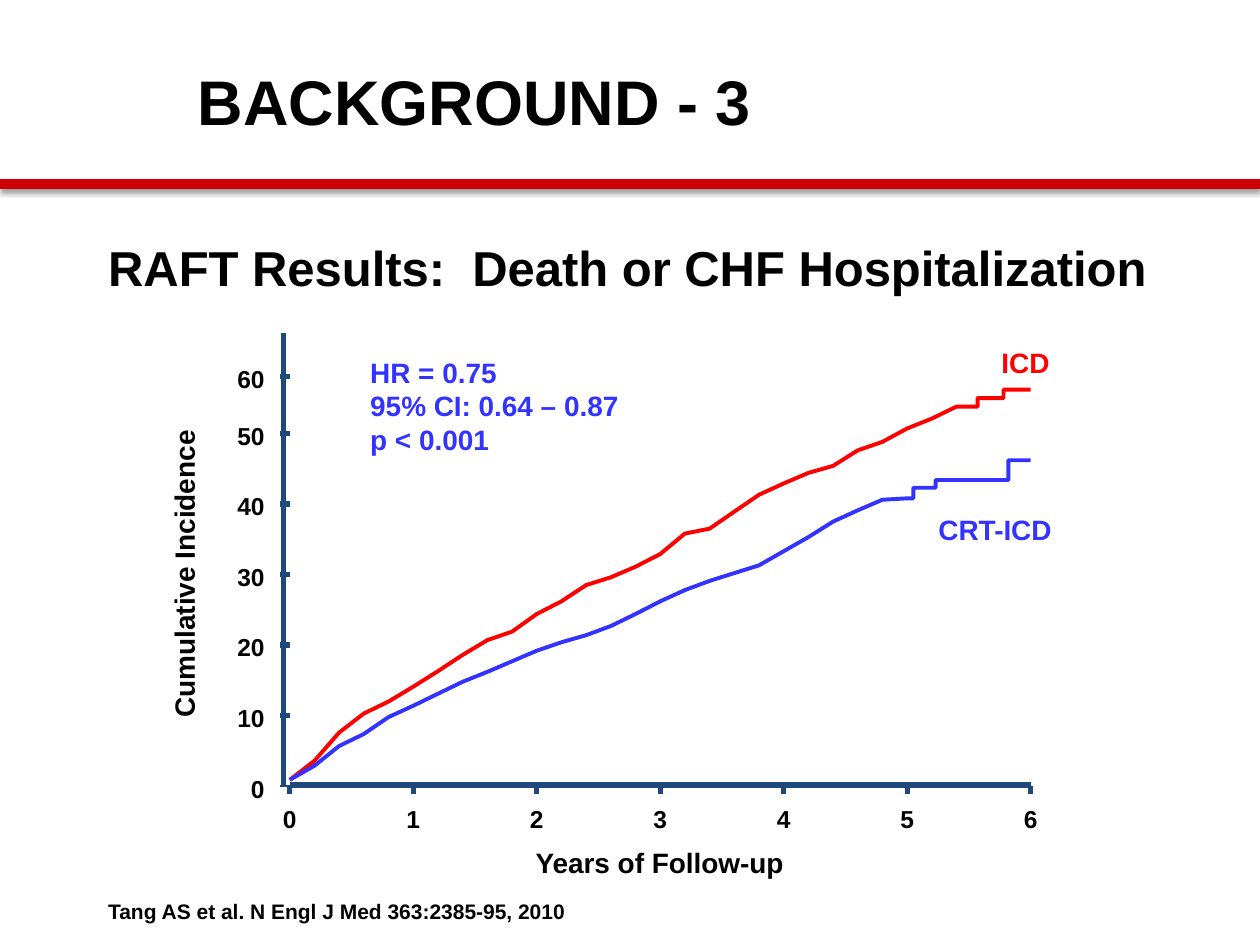
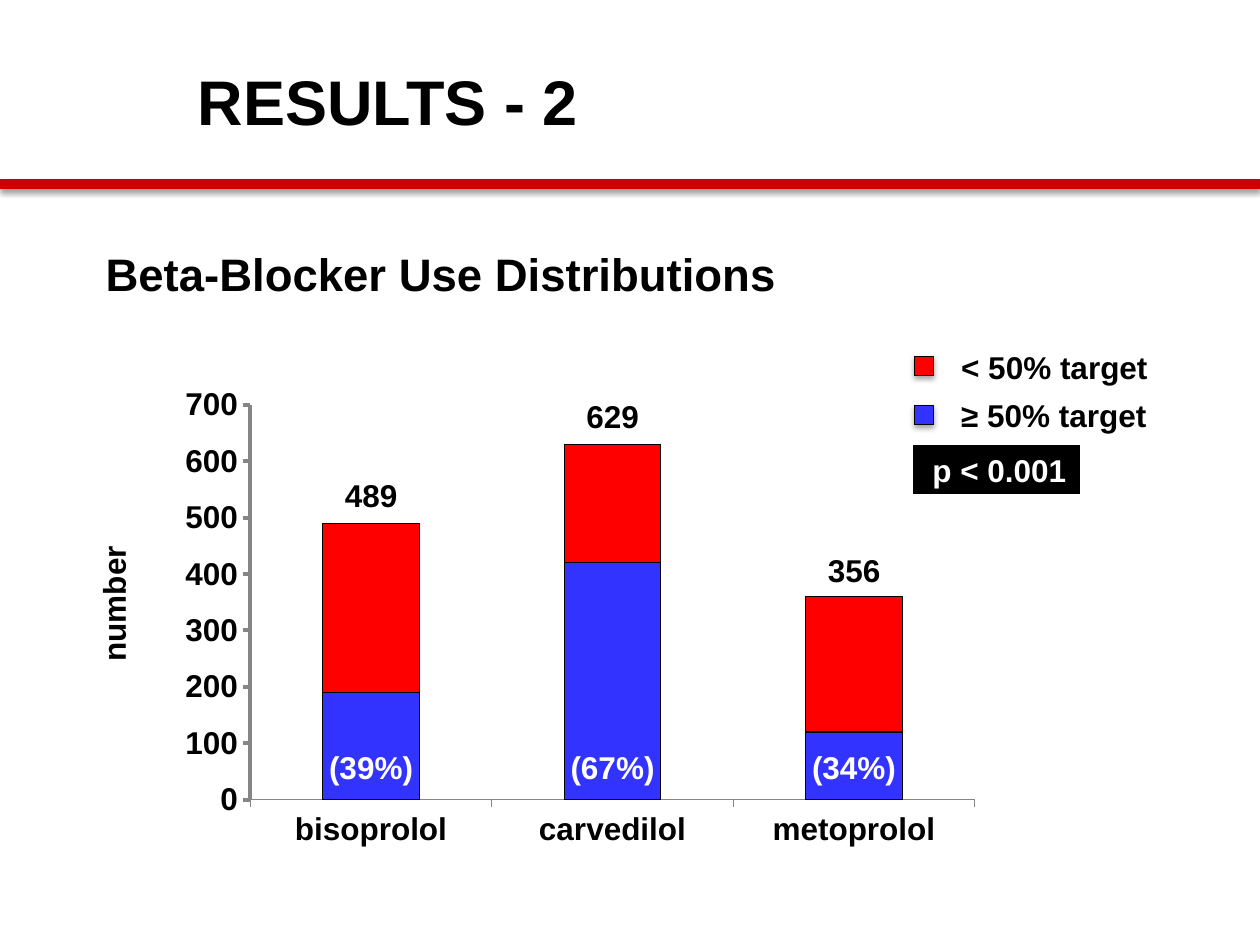
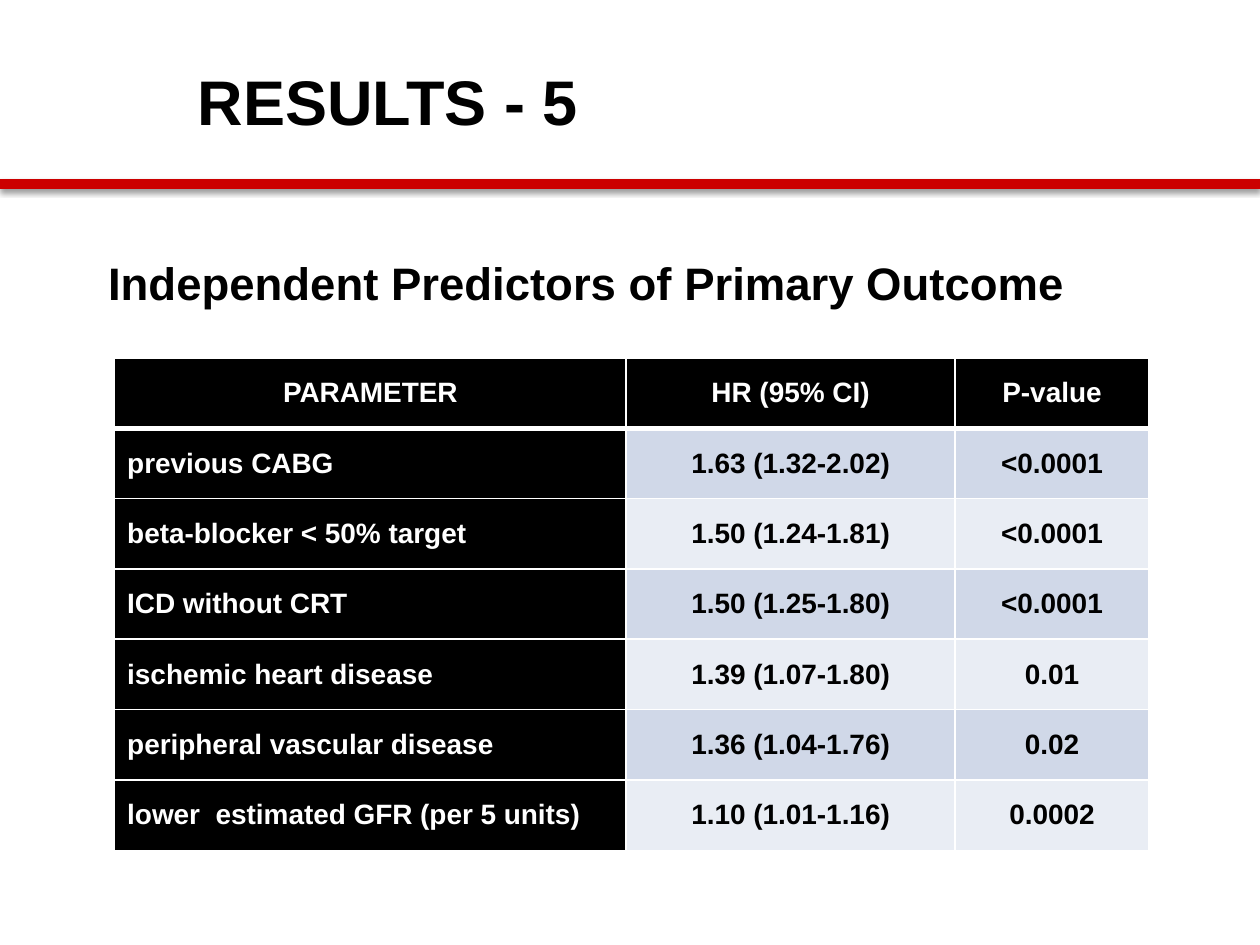
"""Builds three slides of a heart failure trial: survival curves, beta-blocker use and predictors."""
from lxml.etree import SubElement
from pptx import Presentation
from pptx.chart.data import CategoryChartData
from pptx.dml.color import RGBColor
from pptx.enum.chart import XL_CHART_TYPE as ChartType, XL_TICK_MARK as Tick
from pptx.enum.shapes import MSO_CONNECTOR as Connector, MSO_SHAPE as Shape
from pptx.enum.text import MSO_ANCHOR as Anchor, PP_ALIGN as Align
from pptx.oxml import parse_xml
from pptx.oxml.ns import nsdecls, qn
from pptx.util import Inches, Pt

FONT = "Arial"
COLORS = {
    "black": "000000", "white": "FFFFFF", "band": "CC0000", "red": "FF0000", "blue": "3333FF",
    "axis": "1F497D", "grey": "868686", "dark_row": "D0D8E8", "light_row": "E9EDF4",
}
WIDTH, HEIGHT = 10, 7.5
MARGIN = 0.76
BAND_TOP = 1.46
TITLE_BOX = (1.47, 0.17, 6.88, 1.25)

YEARS_PER_VALUE = 0.2
LAST_YEAR = 6
CURVES = [
    {
        "color": "red",
        "incidence": [0.9, 3.6, 7.6, 10.3, 12, 14.1, 16.3, 18.6, 20.7, 21.9, 24.4, 26.2, 28.5, 29.6,
                      31.1, 32.9, 35.8, 36.5, 38.9, 41.3, 42.9, 44.4, 45.4, 47.6, 48.8, 50.7, 52.1, 53.8],
        "late_steps": [(5.57, 55), (5.78, 56.2)],
    },
    {
        "color": "blue",
        "incidence": [0.9, 2.9, 5.7, 7.4, 9.8, 11.4, 13.1, 14.8, 16.2, 17.7, 19.2, 20.4, 21.4,
                      22.7, 24.4, 26.2, 27.8, 29.1, 30.2, 31.3, 33.3, 35.3, 37.5, 39.1, 40.6, 40.8],
        "late_steps": [(5.05, 42.3), (5.23, 43.4), (5.82, 46.2)],
    },
]
ORIGIN_X, ORIGIN_Y = 2.3, 6.24
YEAR_WIDTH, PERCENT_HEIGHT = 0.98, 0.056
AXIS_X, AXIS_TOP = 2.25, 2.64
TOP_TICK_Y = 2.99
TICK_LABEL = (0.4, 0.24)
CURVE_LABELS = [
    ("ICD", (7.85, 2.69, 1, 0.37), "red"),
    ("CRT-ICD", (7.35, 4.02, 1.56, 0.37), "blue"),
    ("HR = 0.75\n95% CI: 0.64 – 0.87\np < 0.001", (2.84, 2.77, 2.4, 0.91), "blue"),
]

DRUGS = ["bisoprolol", "carvedilol", "metoprolol"]
DOSES = [("Series 1", [190, 420, 120], "blue"), ("Series 2", [300, 210, 240], "red")]
TOTALS = [489, 629, 356]
SHARES = ["(39%)", "(67%)", "(34%)"]
LEGEND = [("< 50% target", "red"), ("≥ 50% target", "blue")]
LEGEND_X, LEGEND_Y, LEGEND_STEP, SWATCH = 7.26, 2.83, 0.39, 0.15
CHART_BOX = (1.22, 3.06, 6.67, 3.91)
PLOT_SHARES = (0.115, 0.039, 0.862, 0.802)
VALUE_MAX = 700

PREDICTORS = [
    ("PARAMETER", "HR (95% CI)", "P-value"),
    ("previous CABG", "1.63 (1.32-2.02)", "<0.0001"),
    ("beta-blocker < 50% target", "1.50 (1.24-1.81)", "<0.0001"),
    ("ICD without CRT", "1.50 (1.25-1.80)", "<0.0001"),
    ("ischemic heart disease", "1.39 (1.07-1.80)", "0.01"),
    ("peripheral vascular disease", "1.36 (1.04-1.76)", "0.02"),
    ("lower  estimated GFR (per 5 units)", "1.10 (1.01-1.16)", "0.0002"),
]
COLUMN_WIDTHS = [4.06, 2.61, 1.54]
TABLE_BOX = (0.91, 2.84, 8.2, 3.91)


def rgb(name):
    """Returns the named colour."""
    return RGBColor.from_string(COLORS[name])


def inches(*lengths):
    """Turns numbers into lengths in inches."""
    return [Inches(length) for length in lengths]


def set_font(font, size, color="black"):
    """Applies the bold face used throughout."""
    font.name, font.size, font.bold = FONT, Pt(size), True
    font.color.rgb = rgb(color)


def set_fill(target, color):
    """Fills a shape, cell or series with one colour."""
    target.fill.solid()
    target.fill.fore_color.rgb = rgb(color)


def set_line(line, color, width):
    """Sets the colour and width of an outline."""
    line.color.rgb, line.width = rgb(color), Pt(width)


def set_shadow(shape, alpha=0, distance=1.6):
    """Replaces the theme shadow by none, or by a soft one below the shape."""
    effects = SubElement(shape._element.spPr, qn("a:effectLst"))
    if alpha:
        shadow = SubElement(effects, qn("a:outerShdw"), blurRad=str(Pt(3.1)), dist=str(Pt(distance)),
                            dir="5400000", rotWithShape="0")
        color = SubElement(shadow, qn("a:srgbClr"), val=COLORS["black"])
        SubElement(color, qn("a:alpha"), val=str(alpha * 1000))


def write(frame, text, size, color="black", align=Align.LEFT, gap=0):
    """Writes one paragraph for each line of the text."""
    for index, words in enumerate(text.split("\n")):
        para = frame.add_paragraph() if index else frame.paragraphs[0]
        para.alignment = align
        if index and gap:
            para.space_before = Pt(gap)
        span = para.add_run()
        span.text = words
        set_font(span.font, size, color)


def add_text(page, text, box, size, inset=True, anchor=Anchor.TOP, **style):
    """Adds a text box."""
    label = page.shapes.add_textbox(*inches(*box))
    frame = label.text_frame
    frame.word_wrap, frame.vertical_anchor = True, anchor
    if not inset:
        frame.margin_left = frame.margin_right = frame.margin_top = frame.margin_bottom = 0
    write(frame, text, size, **style)
    return label


def add_line(page, start, end, color="axis", width=3, shadow=0):
    """Draws a straight line."""
    line = page.shapes.add_connector(Connector.STRAIGHT, *inches(*start, *end))
    set_line(line.line, color, width)
    set_shadow(line, shadow)
    return line


def add_rectangle(page, box, fill, outline, shadow=0):
    """Adds a filled rectangle with a thin outline."""
    shape = page.shapes.add_shape(Shape.RECTANGLE, *inches(*box))
    set_fill(shape, fill)
    set_line(shape.line, outline, 0.75)
    set_shadow(shape, shadow, 1.8)
    return shape


def add_page(deck, title):
    """Adds a slide with the shared title style."""
    page = deck.slides.add_slide(deck.slide_layouts[5])
    holder = page.shapes.title
    holder.left, holder.top, holder.width, holder.height = inches(*TITLE_BOX)
    holder.text_frame.vertical_anchor = Anchor.MIDDLE
    write(holder.text_frame, title, 36)
    return page


def add_subtitle(page, text, top, size):
    """Adds the heading below the band."""
    add_text(page, text, (MARGIN, top, 9.2, 0.9), size, anchor=Anchor.MIDDLE)


def add_layout_band(deck, page):
    """Draws the red band once and moves it to the layout that all slides share."""
    band = add_line(page, (0, BAND_TOP), (WIDTH, BAND_TOP), color="band", width=6, shadow=38)
    deck.slide_layouts[5].shapes.element.append(band._element)


def year_x(year):
    """Places a year on the horizontal axis."""
    return ORIGIN_X + year * YEAR_WIDTH


def percent_y(percent):
    """Places an incidence on the vertical axis."""
    return ORIGIN_Y - percent * PERCENT_HEIGHT


def curve_points(incidence, late_steps):
    """Lists years and incidences: evenly spaced values, then level runs with upright steps."""
    points = [(index * YEARS_PER_VALUE, percent) for index, percent in enumerate(incidence)]
    for year, percent in late_steps:
        points += [(year, points[-1][1]), (year, percent)]
    return points + [(LAST_YEAR, points[-1][1])]


def add_curve(page, color, incidence, late_steps):
    """Draws one incidence curve."""
    points = curve_points(incidence, late_steps)
    first, *rest = [inches(year_x(year), percent_y(percent)) for year, percent in points]
    builder = page.shapes.build_freeform(*first)
    builder.add_line_segments(rest, close=False)
    curve = builder.convert_to_shape()
    curve.fill.background()
    set_line(curve.line, color, 2.25)
    set_shadow(curve)


def add_axes(page):
    """Draws both axes with their ticks, numbers and titles."""
    base = ORIGIN_Y - 0.01
    label_width, label_height = TICK_LABEL
    add_line(page, (ORIGIN_X, base), (year_x(LAST_YEAR), base))
    add_line(page, (AXIS_X, AXIS_TOP), (AXIS_X, ORIGIN_Y))
    for percent in range(0, 70, 10):
        y = TOP_TICK_Y if percent == 60 else percent_y(percent)
        add_line(page, (AXIS_X - 0.03, y), (ORIGIN_X, y), width=3 if percent else 1)
        add_text(page, str(percent), (1.7, y - 0.1, label_width, label_height), 14, inset=False,
                 align=Align.RIGHT)
    for year in range(LAST_YEAR + 1):
        x = year_x(year)
        add_line(page, (x, ORIGIN_Y), (x, ORIGIN_Y + 0.06))
        add_text(page, str(year), (x - label_width / 2, 6.38, label_width, label_height), 14,
                 inset=False, align=Align.CENTER)
    title_style = {"size": 16, "inset": False, "align": Align.CENTER}
    add_text(page, "Years of Follow-up", (4.19, 6.71, 2.09, 0.27), **title_style)
    add_text(page, "Cumulative Incidence", (0.21, 4.42, 2.5, 0.27), **title_style).rotation = 270


def build_background(page):
    """Draws the incidence curves with their axes."""
    add_subtitle(page, "RAFT Results:  Death or CHF Hospitalization", 1.67, 28)
    for curve in CURVES:
        add_curve(page, **curve)
    add_axes(page)
    for text, box, color in CURVE_LABELS:
        add_text(page, text, box, 16, color=color)
    add_text(page, "Tang AS et al. N Engl J Med 363:2385-95, 2010", (MARGIN, 7.08, 4, 0.3), 12)


def set_plot_area(chart):
    """Fixes the inner plot area as shares of the chart."""
    area = chart._chartSpace.chart.plotArea
    for old in area.findall(qn("c:layout")):
        area.remove(old)
    settings = [("layoutTarget", "inner"), ("xMode", "edge"), ("yMode", "edge"), *zip("xywh", PLOT_SHARES)]
    parts = "".join(f'<c:{name} val="{value}"/>' for name, value in settings)
    area.insert(0, parse_xml(f'<c:layout {nsdecls("c")}><c:manualLayout>{parts}</c:manualLayout></c:layout>'))


def add_dose_chart(page):
    """Adds the stacked column chart."""
    data = CategoryChartData()
    data.categories = DRUGS
    for name, values, _ in DOSES:
        data.add_series(name, values)
    chart = page.shapes.add_chart(ChartType.COLUMN_STACKED, *inches(*CHART_BOX), data).chart
    chart.has_legend = chart.has_title = False
    set_font(chart.font, 18)
    plot = chart.plots[0]
    plot.gap_width, plot.overlap, plot.vary_by_categories = 150, 100, False
    for series, (_, _, color) in zip(plot.series, DOSES):
        set_fill(series.format, color)
        set_line(series.format.line, "black", 0.75)
    for axis, width in ((chart.category_axis, 0.75), (chart.value_axis, 2.25)):
        axis.has_major_gridlines = False
        axis.major_tick_mark = Tick.OUTSIDE
        set_line(axis.format.line, "grey", width)
        set_font(axis.tick_labels.font, 18)
    scale = chart.value_axis
    scale.minimum_scale, scale.maximum_scale, scale.major_unit = 0, VALUE_MAX, 100
    set_plot_area(chart)


def add_column_labels(page):
    """Writes each total above its column and each share at its foot."""
    left, top, width, height = CHART_BOX
    plot_left, plot_top = left + PLOT_SHARES[0] * width, top + PLOT_SHARES[1] * height
    step, plot_height = PLOT_SHARES[2] * width / len(DRUGS), PLOT_SHARES[3] * height
    for index, (total, share) in enumerate(zip(TOTALS, SHARES)):
        x = plot_left + index * step
        column_top = plot_top + plot_height * (1 - total / VALUE_MAX)
        add_text(page, str(total), (x, column_top - 0.43, step, 0.4), 18, align=Align.CENTER)
        add_text(page, share, (x, 5.89, step, 0.4), 18, color="white", align=Align.CENTER)


def add_legend(page):
    """Adds the legend and the p-value below it."""
    words = "\n".join(label for label, _ in LEGEND)
    add_text(page, words, (LEGEND_X + 0.27, LEGEND_Y - 0.12, 1.8, 0.79), 18, gap=6)
    for row, (_, color) in enumerate(LEGEND):
        box = (LEGEND_X, LEGEND_Y + row * LEGEND_STEP, SWATCH, SWATCH)
        add_rectangle(page, box, color, "black", shadow=35)
    frame = add_rectangle(page, (7.24, 3.53, 1.34, 0.4), "black", "white").text_frame
    frame.margin_left, frame.margin_right = inches(0.16, 0)
    write(frame, "p < 0.001", 18, color="white")


def build_doses(page):
    """Draws the beta-blocker chart with its labels and legend."""
    add_text(page, "Beta-Blocker Use Distributions", (0.74, 1.9, 5.8, 0.54), 26)
    add_dose_chart(page)
    add_column_labels(page)
    number = add_text(page, "number", (0.7, 4.15, 0.5, 1.2), 18)
    number.text_frame._txBody.bodyPr.set("vert", "vert270")
    add_legend(page)


def set_borders(cell, **widths):
    """Gives a cell white borders of the widths stated for each side."""
    properties = cell._tc.get_or_add_tcPr()
    for index, (side, width) in enumerate(widths.items()):
        properties.insert(index, parse_xml(
            f'<a:ln{side} {nsdecls("a")} w="{Pt(width)}"><a:solidFill>'
            f'<a:srgbClr val="{COLORS["white"]}"/></a:solidFill></a:ln{side}>'))


def build_predictors(page):
    """Draws the table of predictors."""
    add_subtitle(page, "Independent Predictors of Primary Outcome", 1.79, 26)
    table = page.shapes.add_table(len(PREDICTORS), len(COLUMN_WIDTHS), *inches(*TABLE_BOX)).table
    for column, width in zip(table.columns, COLUMN_WIDTHS):
        column.width = Inches(width)
    for row, record in enumerate(PREDICTORS):
        stripe = "dark_row" if row % 2 else "light_row"
        for column, words in enumerate(record):
            cell = table.cell(row, column)
            is_header, is_name = row == 0, column == 0
            fill, ink = ("black", "white") if is_header or is_name else (stripe, "black")
            align = Align.LEFT if is_name and not is_header else Align.CENTER
            set_fill(cell, fill)
            write(cell.text_frame, words, 16, color=ink, align=align)
            cell.vertical_anchor = Anchor.MIDDLE
            set_borders(cell, L=1, R=1, T=3 if row == 1 else 1, B=3 if is_header else 1)


def main():
    """Builds and saves the deck."""
    deck = Presentation()
    deck.slide_width, deck.slide_height = inches(WIDTH, HEIGHT)
    background = add_page(deck, "BACKGROUND - 3")
    add_layout_band(deck, background)
    build_background(background)
    build_doses(add_page(deck, "RESULTS - 2"))
    build_predictors(add_page(deck, "RESULTS - 5"))
    deck.save("out.pptx")


if __name__ == "__main__":
    main()
